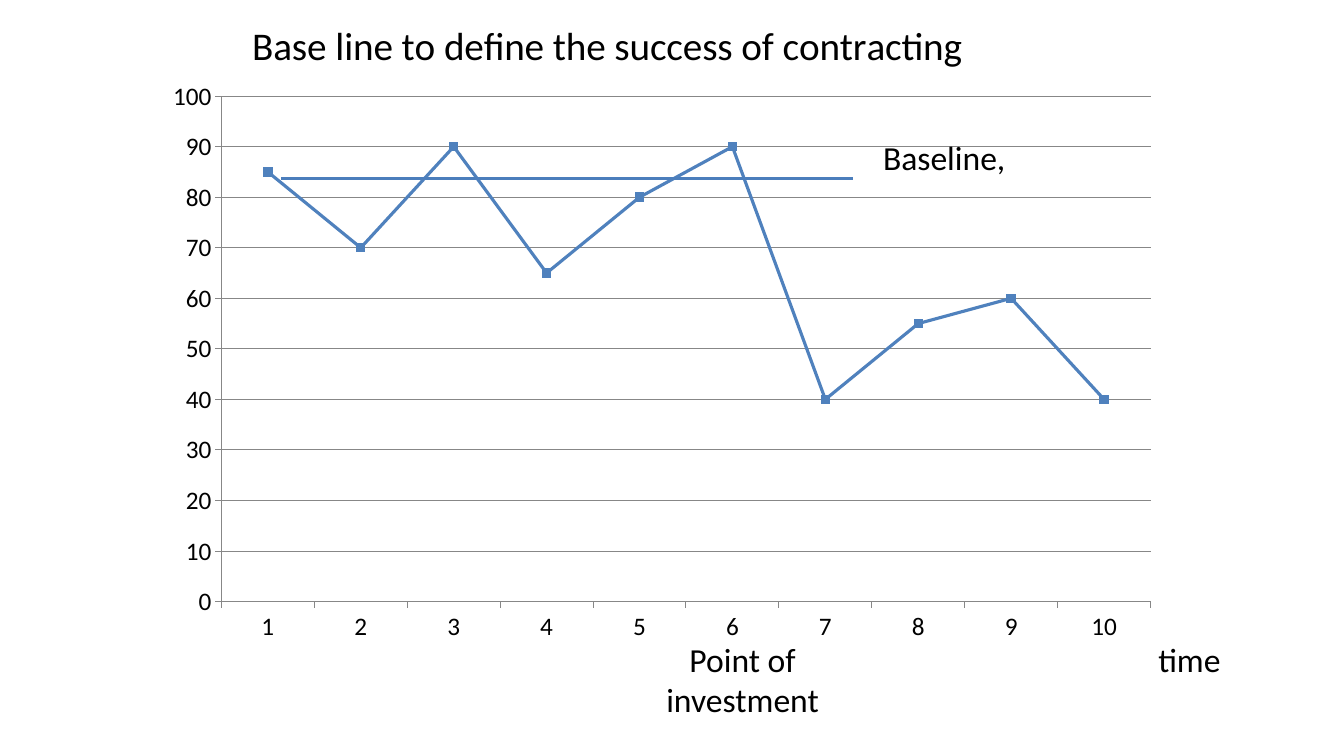
from lxml import etree
from pptx import Presentation
from pptx.chart.data import CategoryChartData
from pptx.dml.color import RGBColor
from pptx.enum.chart import XL_CHART_TYPE, XL_MARKER_STYLE, XL_TICK_MARK
from pptx.enum.shapes import MSO_CONNECTOR
from pptx.enum.text import MSO_AUTO_SIZE, PP_ALIGN
from pptx.oxml import parse_xml
from pptx.oxml.ns import qn
from pptx.util import Inches, Pt

LINE_MARKERS = XL_CHART_TYPE.LINE_MARKERS
SQUARE = XL_MARKER_STYLE.SQUARE
OUTSIDE, NO_TICK = XL_TICK_MARK.OUTSIDE, XL_TICK_MARK.NONE
STRAIGHT = MSO_CONNECTOR.STRAIGHT
GROW = MSO_AUTO_SIZE.SHAPE_TO_FIT_TEXT
LEFT, CENTER = PP_ALIGN.LEFT, PP_ALIGN.CENTER

CHART_NS = "http://schemas.openxmlformats.org/drawingml/2006/chart"
SCORES = [85, 70, 90, 65, 80, 90, 40, 55, 60, 40]


def color(value):
    """Turn a hex string into a colour."""
    return RGBColor.from_string(value)


def place(element, inner=False, **fractions):
    """Give a chart part a manual layout in fractions of the chart."""
    target = '<c:layoutTarget val="inner"/>' if inner else ""
    modes = '<c:xMode val="edge"/><c:yMode val="edge"/>'
    sizes = "".join(f'<c:{key} val="{value}"/>' for key, value in fractions.items())
    layout = parse_xml(
        f'<c:layout xmlns:c="{CHART_NS}"><c:manualLayout>'
        f"{target}{modes}{sizes}</c:manualLayout></c:layout>"
    )
    current = element.find(qn("c:layout"))
    if current is None:
        element.insert(0, layout)
    else:
        element.replace(current, layout)


class SlideBuilder:
    """Hold the style and the current slide."""

    font_name = "Calibri"
    text_color = "000000"
    series_color = "4F81BD"
    baseline_color = "4B7EBC"
    axis_color = "878787"

    def __init__(self, page):
        """Keep the slide that receives the elements."""
        self.page = page

    def style_font(self, font, size):
        """Apply the common text style."""
        font.name = self.font_name
        font.size = Pt(size)
        font.bold = False
        font.color.rgb = color(self.text_color)

    def label(self, text, left, top, width, height, align=LEFT):
        """Add a wrapped text label."""
        box = self.page.shapes.add_textbox(
            Inches(left), Inches(top), Inches(width), Inches(height)
        )
        frame = box.text_frame
        frame.word_wrap = True
        frame.auto_size = GROW
        frame.text = text
        para = frame.paragraphs[0]
        para.alignment = align
        self.style_font(para.runs[0].font, 24)

    def line(self, start_x, start_y, end_x, end_y):
        """Add a straight line without shadow."""
        line = self.page.shapes.add_connector(
            STRAIGHT, Inches(start_x), Inches(start_y), Inches(end_x), Inches(end_y)
        )
        line.line.color.rgb = color(self.baseline_color)
        line.line.width = Pt(2)
        etree.SubElement(line._element.spPr, qn("a:effectLst"))

    def line_chart(self, title, values, left, top, width, height):
        """Add a line chart with markers and a title."""
        data = CategoryChartData()
        data.categories = [str(number) for number in range(1, len(values) + 1)]
        data.add_series("Series 1", values)
        chart = self.page.shapes.add_chart(
            LINE_MARKERS, Inches(left), Inches(top), Inches(width), Inches(height), data
        ).chart
        self.style_font(chart.font, 18)
        chart.has_legend = False
        self.chart_title(chart, title)
        self.style_axes(chart)
        self.style_series(chart.plots[0])
        plot_area = chart._chartSpace.find(".//" + qn("c:plotArea"))
        place(plot_area, inner=True, x=0.067, y=0.158, w=0.9, h=0.767)

    def chart_title(self, chart, title):
        """Write and place the chart title."""
        chart.has_title = True
        frame = chart.chart_title.text_frame
        frame.text = title
        self.style_font(frame.paragraphs[0].runs[0].font, 28)
        place(chart.chart_title._element, x=0.09, y=0.03)

    def style_axes(self, chart):
        """Set scale, tick marks and lines of both axes."""
        value_axis = chart.value_axis
        value_axis.minimum_scale = 0
        value_axis.maximum_scale = 100
        value_axis.major_unit = 10
        value_axis.has_major_gridlines = True
        for axis in (chart.category_axis, value_axis):
            axis.major_tick_mark = OUTSIDE
            axis.minor_tick_mark = NO_TICK
            self.style_font(axis.tick_labels.font, 18)
        for part in (chart.category_axis, value_axis, value_axis.major_gridlines):
            part.format.line.color.rgb = color(self.axis_color)
            part.format.line.width = Pt(0.75)

    def style_series(self, plot):
        """Set the line and markers of the series."""
        plot.vary_by_categories = False
        series = plot.series[0]
        series.smooth = False
        series.format.line.color.rgb = color(self.series_color)
        series.format.line.width = Pt(2.25)
        marker = series.marker
        marker.style = SQUARE
        marker.size = 6
        marker.format.fill.solid()
        marker.format.fill.fore_color.rgb = color(self.series_color)
        marker.format.line.color.rgb = color(self.series_color)


def main():
    """Build and save the slide."""
    deck = Presentation()
    deck.slide_width, deck.slide_height = Inches(13.33), Inches(7.5)
    builder = SlideBuilder(deck.slides.add_slide(deck.slide_layouts[6]))
    builder.line_chart(
        "Base line to define the success of contracting ",
        SCORES, 1.51, -0.08, 10.24, 6.54,
    )
    builder.label("Point of investment", 6.26, 6.29, 2.21, 0.91, CENTER)
    builder.label("Baseline,", 8.66, 1.31, 2.1, 0.5)
    builder.line(2.79, 1.77, 8.46, 1.77)
    builder.label("time", 11.39, 6.29, 0.86, 0.5)
    deck.save("out.pptx")


if __name__ == "__main__":
    main()
